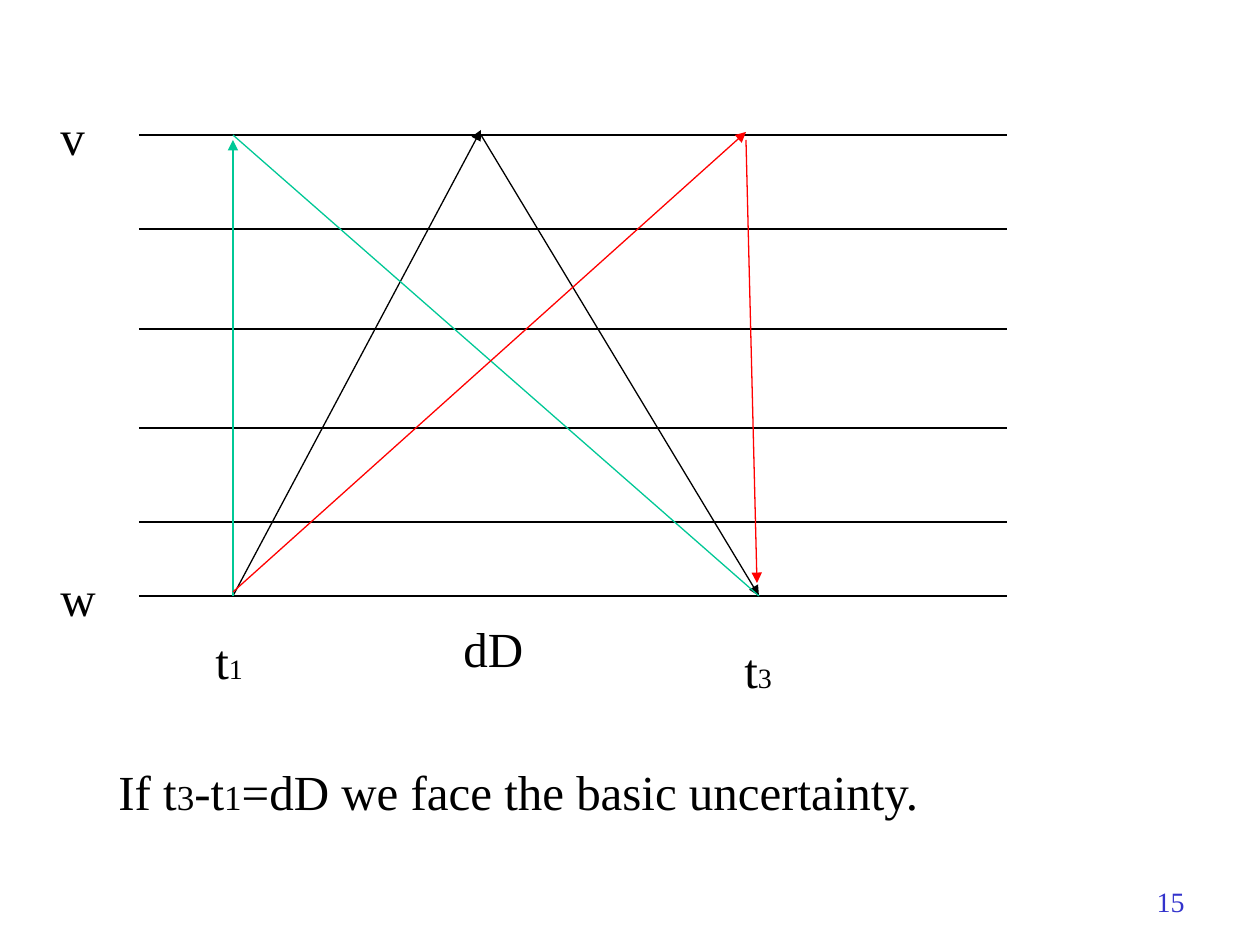
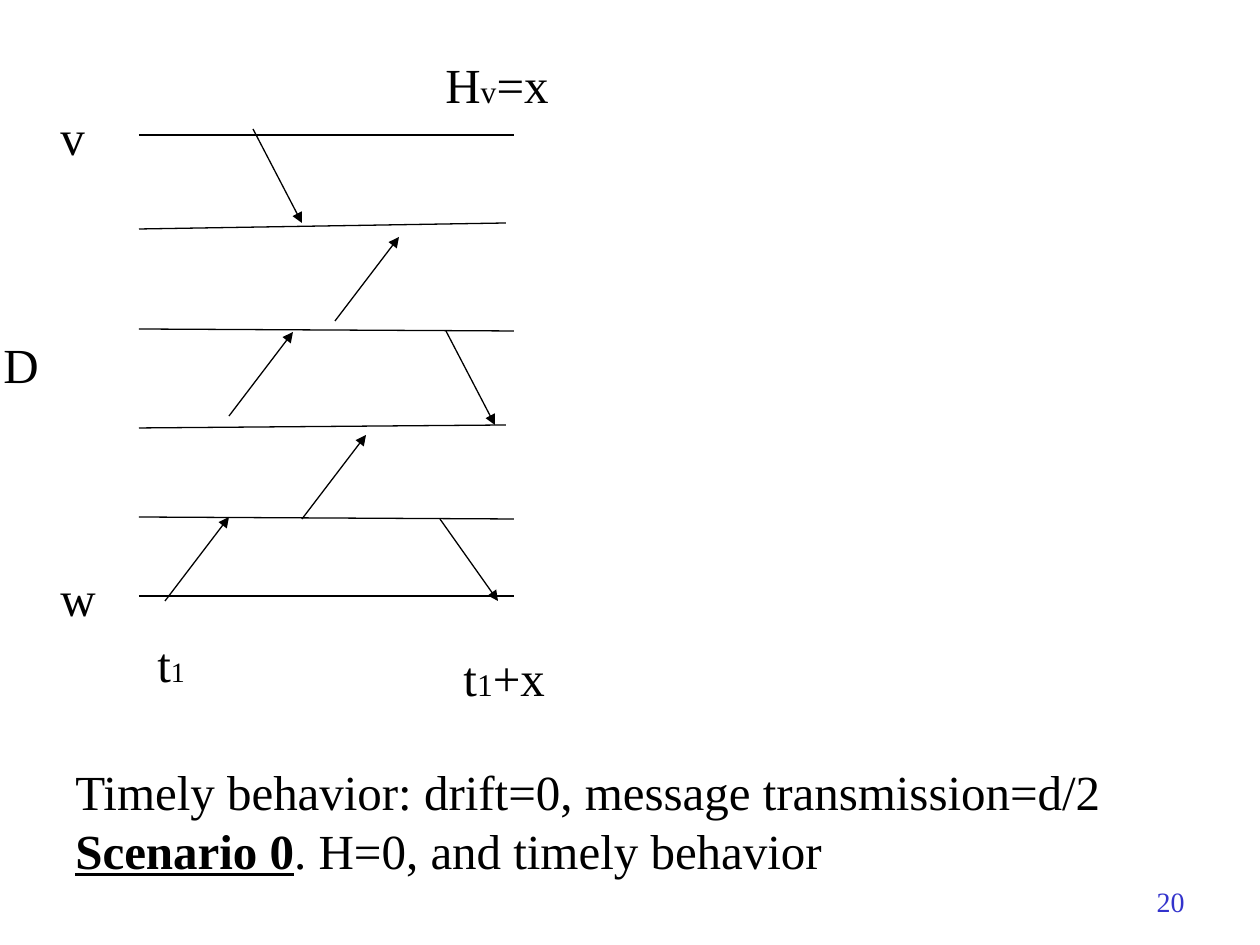
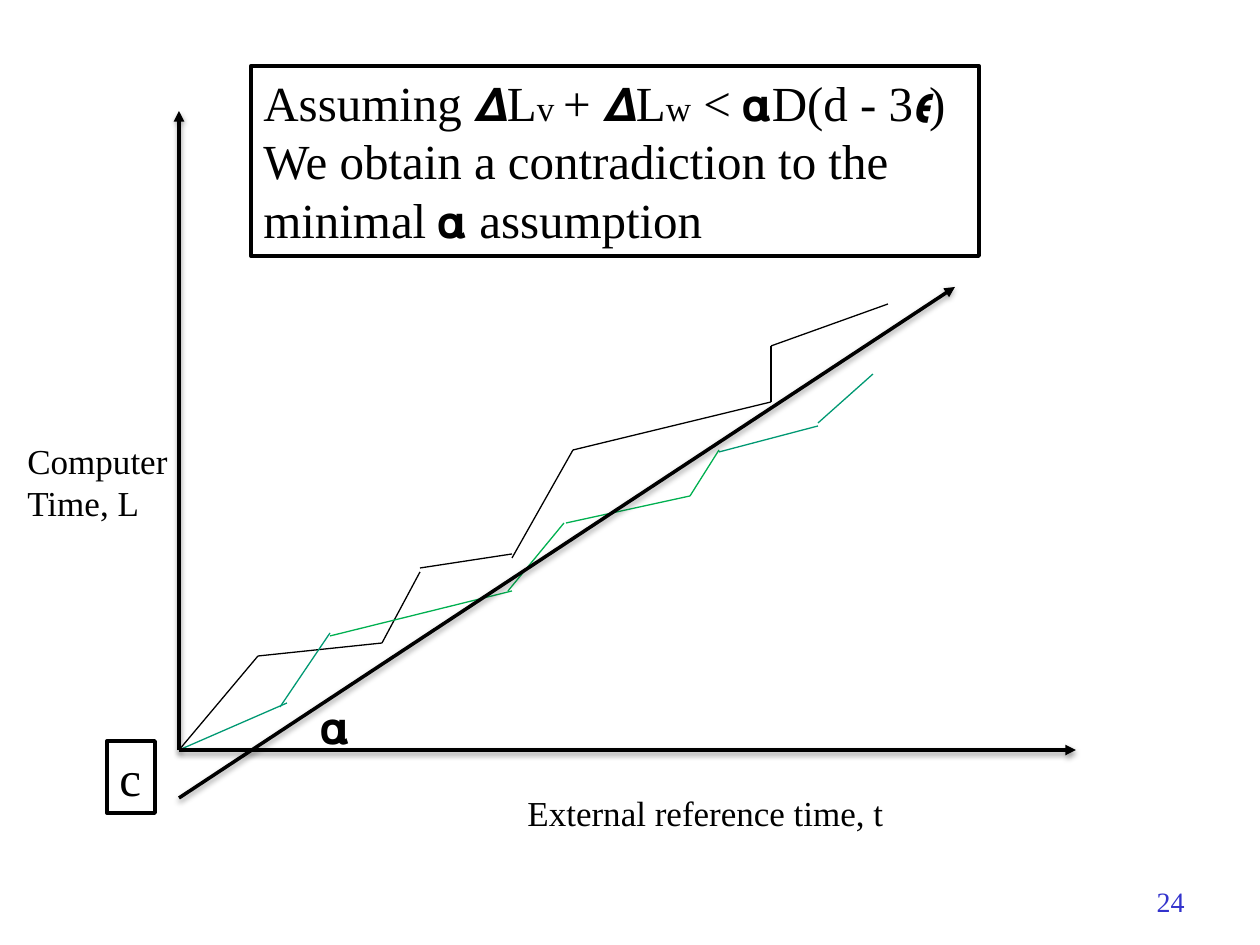
from itertools import pairwise

from lxml import etree
from pptx import Presentation
from pptx.dml.color import RGBColor
from pptx.enum.shapes import MSO_CONNECTOR, MSO_SHAPE
from pptx.enum.text import MSO_ANCHOR, MSO_AUTO_SIZE, PP_ALIGN
from pptx.oxml.ns import qn
from pptx.util import Pt

PX = 914400 / 126
FONT = "Times New Roman"
COLORS = {
    "ink": "000000",
    "page": "3333CC",
    "mint": "00C896",
    "red": "FF0000",
    "teal": "009973",
    "green": "00B050",
}
BODY, LABEL, SMALL = 28, 20, 16
ROW = 72  # height of one line of body text
THIN, AXIS, FRAME = 0.75, 2, 2.25

# A run is (text, size) or (text, size, "bold underline"); a label is
# (left, top, width, height, paragraphs).
NODE_LABELS = [
    (48, 561, 62, ROW, [[("w", BODY)]]),
    (48, 100, 50, ROW, [[("v", BODY)]]),
]

# Slide 15: round trips between v and w
ROUND_LEFT, ROUND_RIGHT = 139, 1007
ROUND_LEVELS = [135, 229, 329, 428, 522, 596]
ROUND_TRIPS = [  # start, end, colour, arrow
    ((233, 596), (481, 130), "ink", True),
    ((481, 135), (759, 596), "ink", True),
    ((233, 596), (233, 140), "mint", True),
    ((233, 135), (759, 596), "mint", False),
    ((233, 592), (746, 132), "red", True),
    ((746, 140), (757, 583), "red", True),
]
ROUND_LABELS = [
    (203, 624, 53, ROW, [[("t", BODY), ("1", SMALL)]]),
    (732, 633, 53, ROW, [[("t", BODY), ("3", SMALL)]]),
    (451, 612, 86, ROW, [[("dD", BODY)]]),
    (106, 755, 833, ROW, [[
        ("If t", BODY), ("3", 20), ("-t", BODY), ("1", 20),
        ("=dD we face the basic uncertainty.", BODY),
    ]]),
]

# Slide 20: timely behavior
TIMELY_LEVELS = [
    ((139, 135), (514, 135)),
    ((139, 229), (506, 223)),
    ((139, 329), (514, 331)),
    ((139, 428), (506, 425)),
    ((139, 517), (514, 519)),
    ((139, 596), (514, 596)),
]
UP, DOWN, LAST_DOWN = (64, -84), (49, 94), (58, 82)
MESSAGES = [
    ((165, 601), UP), ((302, 519), UP), ((229, 416), UP), ((335, 321), UP),
    ((253, 129), DOWN), ((446, 331), DOWN), ((440, 519), LAST_DOWN),
]
TIMELY_LABELS = [
    (145, 627, 53, ROW, [[("t", BODY), ("1", SMALL)]]),
    (451, 641, 110, ROW, [[("t", BODY), ("1", 18), ("+x", BODY)]]),
    (-9, 328, 62, ROW, [[("D", BODY)]]),
    (433, 48, 130, ROW, [[("H", BODY), ("v", 18), ("=x", BODY)]]),
]
SCENARIO = (63, 755, 1097, 131, [
    [("Timely behavior: drift=0, message transmission=d/2", BODY)],
    [("Scenario 0", BODY, "bold underline"), (". H=0, and timely behavior", BODY)],
])

# Slide 24: logical clocks against reference time
ORIGIN = (179, 750)
AXES = [(ORIGIN, (1076, 750)), (ORIGIN, (179, 111))]
MINIMAL_RATE = ((179, 798), (955, 287))
FAST_CLOCK = [
    ("ink", [ORIGIN, (258, 656), (382, 643), (420, 572)]),
    ("ink", [(420, 568), (512, 554)]),
    ("ink", [(512, 558), (573, 450), (771, 402), (771, 346), (888, 304)]),
]
SLOW_CLOCK = [
    ("teal", [ORIGIN, (287, 703)]),
    ("teal", [(280, 707), (330, 633)]),
    ("green", [(330, 636), (512, 591)]),
    ("green", [(508, 591), (564, 523)]),
    ("green", [(566, 523), (690, 496), (719, 450)]),
    ("teal", [(719, 452), (818, 426)]),
    ("teal", [(818, 423), (873, 374)]),
]
COMPUTER_TIME = (15, 433, 228, 97, [[("Computer", LABEL)], [("Time, L", LABEL)]])
CLOCK_LABELS = [
    (515, 785, 384, 55, [[("External reference time, t", LABEL)]]),
    (309, 689, 57, ROW, [[("𝝰", BODY)]]),
]
FRAMED_LABELS = [
    (107, 741, 48, ROW, [[("c", BODY)]]),
    (251, 66, 728, 190, [
        [("Assuming 𝞓L", BODY), ("v ", 20), ("+ 𝞓L", BODY), ("w", 20),
         (" < 𝝰D(d - 3𝟄)", BODY)],
        [("We obtain a contradiction to the", BODY)],
        [("minimal 𝝰 assumption", BODY)],
    ]),
]


def px(*lengths):
    return [round(length * PX) for length in lengths]


def rgb(name):
    return RGBColor.from_string(COLORS[name])


def write(shape, paragraphs, color="ink", align=PP_ALIGN.LEFT, wrap=False):
    frame = shape.text_frame
    frame.word_wrap = wrap
    for index, runs in enumerate(paragraphs):
        paragraph = frame.add_paragraph() if index else frame.paragraphs[0]
        paragraph.alignment = align
        for text, size, *style in runs:
            run = paragraph.add_run()
            run.text = text
            run.font.name = FONT
            run.font.size = Pt(size)
            run.font.color.rgb = rgb(color)
            if style:
                run.font.bold = run.font.underline = True
    return frame


def add_label(slide, label, wrap=False):
    *place, paragraphs = label
    frame = write(slide.shapes.add_textbox(*px(*place)), paragraphs, wrap=wrap)
    frame.auto_size = MSO_AUTO_SIZE.SHAPE_TO_FIT_TEXT


def add_framed_label(slide, label):
    *place, paragraphs = label
    box = slide.shapes.add_shape(MSO_SHAPE.RECTANGLE, *px(*place))
    box.shadow.inherit = False
    box.fill.background()
    box.line.color.rgb = rgb("ink")
    box.line.width = Pt(FRAME)
    frame = write(box, paragraphs)
    frame.vertical_anchor = MSO_ANCHOR.TOP
    frame.auto_size = MSO_AUTO_SIZE.SHAPE_TO_FIT_TEXT


def add_line(shapes, start, end, color="ink", arrow=False, width=THIN, shadow=False):
    line = shapes.add_connector(MSO_CONNECTOR.STRAIGHT, *px(*start, *end))
    line.line.color.rgb = rgb(color)
    line.line.width = Pt(width)
    properties = line._element.spPr
    if arrow:
        etree.SubElement(properties.find(qn("a:ln")), qn("a:tailEnd"), type="triangle")
    effects = etree.SubElement(properties, qn("a:effectLst"))
    if shadow:
        outer = etree.SubElement(effects, qn("a:outerShdw"), blurRad="40000",
                                 dist="20000", dir="5400000", rotWithShape="0")
        shade = etree.SubElement(outer, qn("a:srgbClr"), val=COLORS["ink"])
        etree.SubElement(shade, qn("a:alpha"), val="38000")


def add_clock(slide, strokes):
    group = slide.shapes.add_group_shape()
    for color, points in strokes:
        for start, end in pairwise(points):
            add_line(group.shapes, start, end, color)


def add_slide(deck, number, labels):
    """Add a blank slide with its page number and plain labels."""
    slide = deck.slides.add_slide(deck.slide_layouts[6])
    page = slide.shapes.add_textbox(*px(903, 876, 294, 50))
    frame = write(page, [[(str(number), SMALL)]], "page", PP_ALIGN.RIGHT, wrap=True)
    frame.vertical_anchor = MSO_ANCHOR.MIDDLE
    for label in labels:
        add_label(slide, label)
    return slide


def build_round_trips(deck):
    slide = add_slide(deck, 15, NODE_LABELS + ROUND_LABELS)
    for y in ROUND_LEVELS:
        add_line(slide.shapes, (ROUND_LEFT, y), (ROUND_RIGHT, y))
    for trip in ROUND_TRIPS:
        add_line(slide.shapes, *trip)


def build_timely_behavior(deck):
    slide = add_slide(deck, 20, NODE_LABELS + TIMELY_LABELS)
    add_label(slide, SCENARIO, wrap=True)
    for start, end in TIMELY_LEVELS:
        add_line(slide.shapes, start, end)
    for (x, y), (dx, dy) in MESSAGES:
        add_line(slide.shapes, (x, y), (x + dx, y + dy), arrow=True)


def build_clocks(deck):
    slide = add_slide(deck, 24, CLOCK_LABELS)
    add_label(slide, COMPUTER_TIME, wrap=True)
    add_clock(slide, FAST_CLOCK)
    add_clock(slide, SLOW_CLOCK)
    for start, end in [*AXES, MINIMAL_RATE]:
        add_line(slide.shapes, start, end, arrow=True, width=AXIS, shadow=True)
    for label in FRAMED_LABELS:
        add_framed_label(slide, label)


def main():
    deck = Presentation()
    deck.slide_width, deck.slide_height = px(1260, 945)
    build_round_trips(deck)
    build_timely_behavior(deck)
    build_clocks(deck)
    deck.save("out.pptx")


if __name__ == "__main__":
    main()
